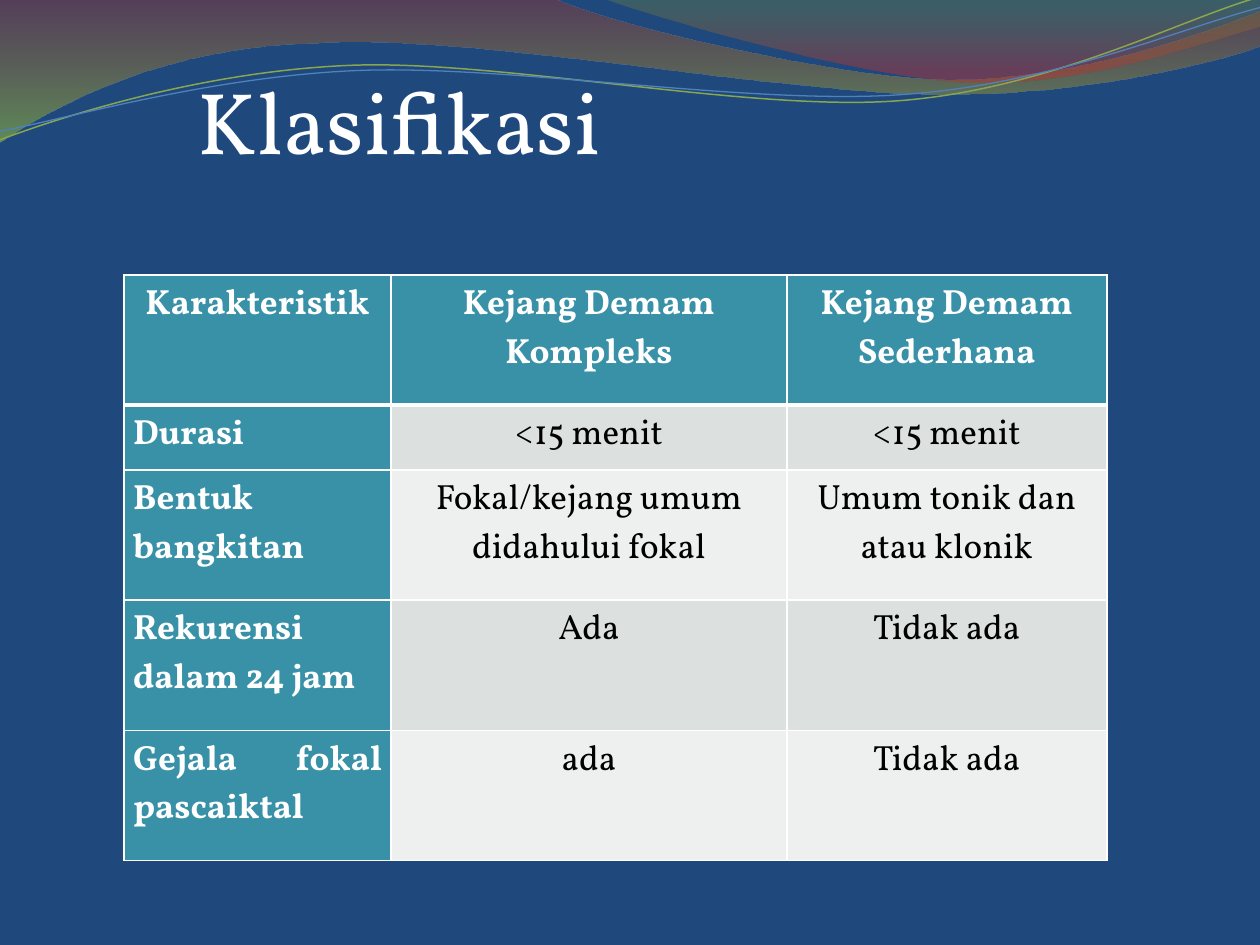
from dataclasses import dataclass
from typing import Optional

from lxml.etree import SubElement
from pptx import Presentation
from pptx.dml.color import RGBColor as RGB
from pptx.enum.text import MSO_ANCHOR as Anchor, PP_ALIGN as Align
from pptx.oxml.ns import qn
from pptx.util import Pt

FONT = "Vollkorn"
WHITE, BLACK, NAVY = "FFFFFF", "000000", "1F497D"
TEAL, BANDS = "3891A7", ("EEF0EF", "DCE0DE")


@dataclass
class Stop:
    pos: float
    color: str
    alpha: int


@dataclass
class Wave:
    start: tuple
    steps: list
    stops: tuple = ()
    color: Optional[str] = None
    width: float = 0


WAVES = [
    Wave((0, 0), [
        [(316.8, -0.7)],
        [(342.7, 12.2), (478.1, 45.4), (545.8, 45.4)],
        [(614.2, 45.4), (689.8, 18.7), (720, 6.5)],
        [(720.7, 25.9)],
        [(707.8, 31.7), (626.4, 54.7), (537.1, 54)],
        [(447.8, 54), (275, 20.2), (185, 24.5)],
        [(92.9, 25.9), (33.1, 59.8), (-0.7, 81.4)],
        [(0, 0)],
    ], stops=(Stop(0, "973330", 45), Stop(1, "95C238", 55))),
    Wave((344.9, -0.7), [
        [(366.5, 7.9), (491, 44.6), (553.7, 46.8)],
        [(616.3, 49.7), (691.9, 23), (720, 15.1)],
        [(720, 0)],
        [(344.9, -0.7)],
    ], stops=(Stop(0, "769537", 30), Stop(0.8, "BE3330", 45))),
    Wave((0, 79.9), [
        [(34.6, 67), (113.8, 41), (199.4, 37.4)],
        [(284.4, 33.8), (427, 64.1), (513.4, 57.6)],
        [(599.8, 51.1), (675.4, 10.8), (718.6, -1.4)],
    ], color="89A54F", width=0.85),
    Wave((0, 74.9), [
        [(33.8, 69.1), (118.1, 43.9), (203.8, 40.3)],
        [(290.2, 36.7), (429.8, 60.5), (516.2, 54)],
        [(601.9, 48.2), (677.5, 15.1), (720, 4.3)],
    ], color="4F81BD", width=0.75),
]

ROWS = [
    ("Karakteristik", "Kejang Demam Kompleks", "Kejang Demam Sederhana"),
    ("Durasi", "<15 menit", "<15 menit"),
    ("Bentuk bangkitan", "Fokal/kejang umum didahului fokal",
     "Umum tonik dan atau klonik"),
    ("Rekurensi dalam 24 jam", "Ada", "Tidak ada"),
    ("Gejala fokal pascaiktal", "ada", "Tidak ada"),
]
WIDTHS = (152.6, 226.1, 182.9)
HEIGHTS = (74.4, 37.2, 74.4, 74.4, 74.4)


def paint(target, color: str) -> None:
    target.rgb = RGB.from_string(color)


def style(para, size: float, color: str, bold: bool = False) -> None:
    for run in para.runs:
        run.font.name, run.font.size, run.font.bold = FONT, Pt(size), bold
        paint(run.font.color, color)


def bend(shape, steps: list) -> None:
    trace = next(shape._element.iter(qn("a:path")))
    lines = trace.findall(qn("a:lnTo"))
    for step in steps:
        group, lines = lines[:len(step)], lines[len(step):]
        if len(step) == 3:
            curve = SubElement(trace, qn("a:cubicBezTo"))
            group[0].addprevious(curve)
            for line in group:
                curve.append(line[0])
                trace.remove(line)


def shade(shape, stops: tuple) -> None:
    shape.fill.gradient()
    shape.fill.gradient_angle = 270
    for stop, item in zip(shape.fill.gradient_stops, stops):
        stop.position = item.pos
        paint(stop.color, item.color)
    marks = shape._element.spPr.iter(qn("a:srgbClr"))
    for mark, item in zip(list(marks), stops):
        SubElement(mark, qn("a:alpha"), val=str(item.alpha * 1000))


def draw_wave(slide, wave: Wave) -> None:
    x, y = wave.start
    form = slide.shapes.build_freeform(Pt(x), Pt(y))
    spots = [(Pt(a), Pt(b)) for step in wave.steps for a, b in step]
    form.add_line_segments(spots, close=bool(wave.stops))
    shape = form.convert_to_shape()
    shape.shadow.inherit = False
    bend(shape, wave.steps)
    if wave.stops:
        shade(shape, wave.stops)
        shape.line.fill.background()
    else:
        shape.fill.background()
        paint(shape.line.color, wave.color)
        shape.line.width = Pt(wave.width)


def draw_title(slide, text: str) -> None:
    box = slide.shapes.add_textbox(Pt(113), Pt(21.6), Pt(590.4), Pt(90))
    frame = box.text_frame
    frame.word_wrap = True
    frame.vertical_anchor = Anchor.MIDDLE
    frame.margin_left = frame.margin_right = frame.margin_bottom = 0
    frame.margin_top = Pt(3.6)
    frame.text = text
    style(frame.paragraphs[0], 50, WHITE)


def edge(cell, side: str, width: float) -> None:
    props = cell._tc.get_or_add_tcPr()
    line = SubElement(props, qn(f"a:ln{side}"), w=str(Pt(width)))
    fill = SubElement(line, qn("a:solidFill"))
    SubElement(fill, qn("a:srgbClr"), val=WHITE)


def draw_cell(cell, text: str, row: int, col: int) -> None:
    head = row == 0 or col == 0
    cell.margin_left = cell.margin_right = Pt(5.2)
    cell.margin_top = cell.margin_bottom = Pt(3.6)
    cell.text_frame.text = text
    para = cell.text_frame.paragraphs[0]
    para.alignment = Align.JUSTIFY if row and not col else Align.CENTER
    style(para, 20, WHITE if head else BLACK, head)
    for side in "LRTB":
        thick = (row, side) in ((0, "B"), (1, "T"))
        edge(cell, side, 3 if thick else 1)
    cell.fill.solid()
    paint(cell.fill.fore_color, TEAL if head else BANDS[row % 2])


def draw_table(slide) -> None:
    table = slide.shapes.add_table(
        len(ROWS), len(WIDTHS), Pt(70.9), Pt(157),
        Pt(sum(WIDTHS)), Pt(sum(HEIGHTS))).table
    for col, width in zip(table.columns, WIDTHS):
        col.width = Pt(width)
    for row, height in zip(table.rows, HEIGHTS):
        row.height = Pt(height)
    for r, texts in enumerate(ROWS):
        for c, text in enumerate(texts):
            draw_cell(table.cell(r, c), text, r, c)


def main() -> None:
    deck = Presentation()
    deck.slide_width, deck.slide_height = Pt(720), Pt(540)
    slide = deck.slides.add_slide(deck.slide_layouts[6])
    slide.background.fill.solid()
    paint(slide.background.fill.fore_color, NAVY)
    for wave in WAVES:
        draw_wave(slide, wave)
    draw_title(slide, "Klasifikasi")
    draw_table(slide)
    deck.save("out.pptx")


if __name__ == "__main__":
    main()
